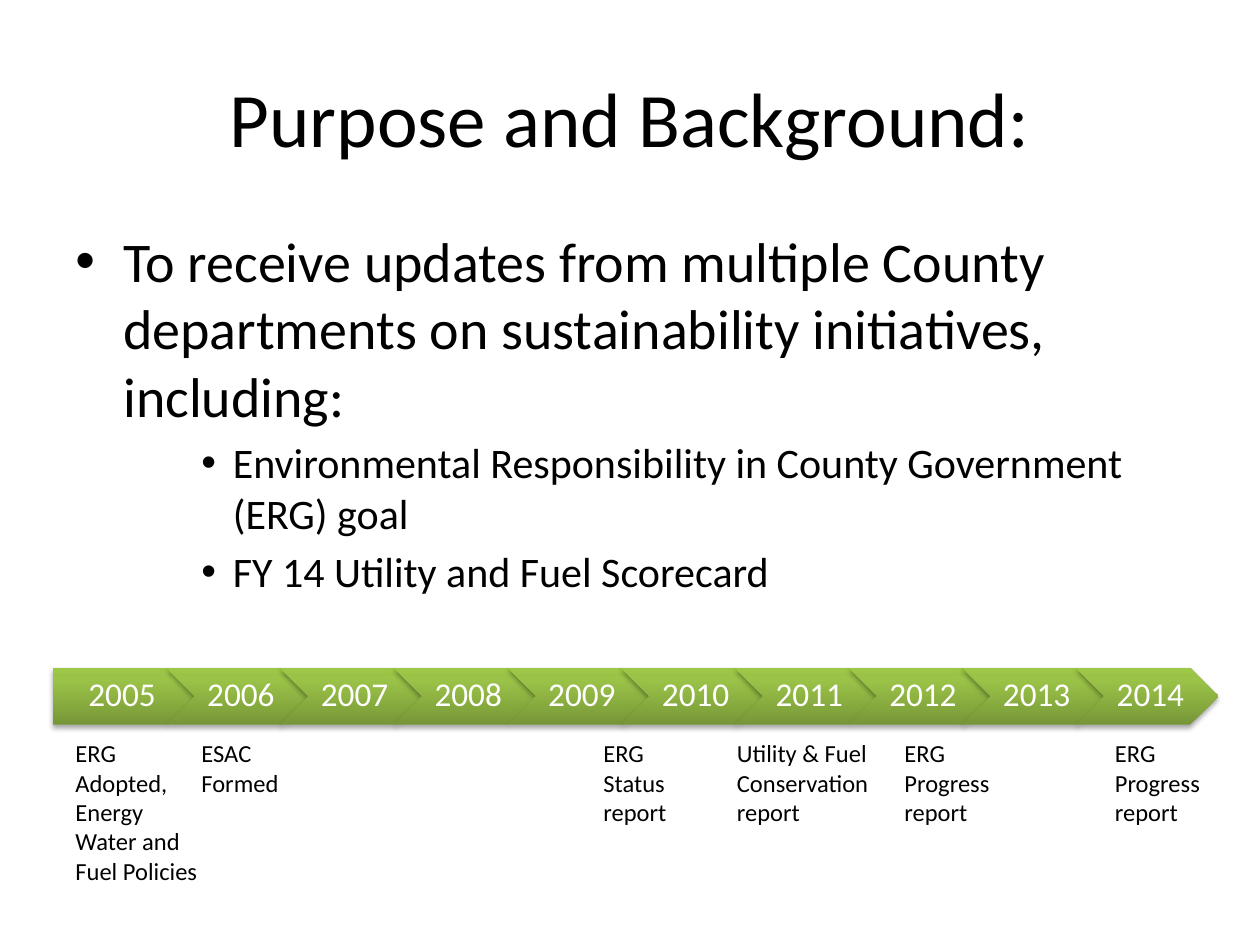
from dataclasses import dataclass

from lxml import etree
from pptx import Presentation
from pptx.dml.color import RGBColor
from pptx.enum.shapes import MSO_SHAPE
from pptx.enum.text import MSO_ANCHOR, PP_ALIGN
from pptx.oxml import parse_xml
from pptx.oxml.ns import nsdecls, qn
from pptx.util import Inches, Pt

HOME_PLATE, CHEVRON = MSO_SHAPE.PENTAGON, MSO_SHAPE.CHEVRON
MIDDLE, CENTER = MSO_ANCHOR.MIDDLE, PP_ALIGN.CENTER


@dataclass(frozen=True)
class Theme:
    font: str = "Calibri"
    text: str = "000000"
    year_text: str = "FFFFFF"
    greens: tuple = ((0, "779737"), (80, "9BC348"), (100, "9DC746"))
    title_size: int = 44
    lead_size: int = 32
    item_size: int = 24
    year_size: int = 19
    label_size: int = 14


theme = Theme()


def style(paragraph, size, color=theme.text):
    paragraph.font.name = theme.font
    paragraph.font.size = Pt(size)
    paragraph.font.color.rgb = RGBColor.from_string(color)


def add_text_box(left, top, width, height):
    frame = slide.shapes.add_textbox(
        Inches(left), Inches(top), Inches(width), Inches(height)).text_frame
    frame.word_wrap = True
    return frame


prs = Presentation()
prs.slide_width, prs.slide_height = Inches(10), Inches(7.5)
slide = prs.slides.add_slide(prs.slide_layouts[5])

# Title
title = slide.shapes.title
title.left, title.top = Inches(0.5), Inches(0.3)
title.width, title.height = Inches(9), Inches(1.25)
title.text_frame.text = "Purpose and Background:"
title.text_frame.vertical_anchor = MIDDLE
title.text_frame.paragraphs[0].alignment = CENTER
style(title.text_frame.paragraphs[0], theme.title_size)

# Purpose bullets: text, level, left margin, hanging indent, size, space before
purpose = [
    ("To receive updates from multiple County departments on sustainability "
     "initiatives, including:", 0, 0.38, 0.38, theme.lead_size, 0),
    ("Environmental Responsibility in County Government (ERG) goal",
     2, 1.25, 0.25, theme.item_size, 4.8),
    ("FY 14 Utility and Fuel Scorecard", 2, 1.25, 0.25, theme.item_size, 4.8),
]
body = add_text_box(0.5, 1.75, 9, 3.4)
for i, (text, level, margin, hanging, size, before) in enumerate(purpose):
    item = body.paragraphs[0] if i == 0 else body.add_paragraph()
    item.text = text
    item.level = level
    item.space_before = Pt(before)
    props = item._p.get_or_add_pPr()
    props.set("marL", str(Inches(margin)))
    props.set("indent", str(-Inches(hanging)))
    etree.SubElement(props, qn("a:buFont")).set("typeface", "Arial")
    etree.SubElement(props, qn("a:buChar")).set("char", "•")
    style(item, size)

# Timeline of years
stops = "".join(f'<a:gs pos="{pos * 1000}"><a:srgbClr val="{color}"/></a:gs>'
                for pos, color in theme.greens)
GRADIENT = (f'<a:gradFill {nsdecls("a")} rotWithShape="1"><a:gsLst>{stops}</a:gsLst>'
            '<a:lin ang="16200000" scaled="0"/></a:gradFill>')
SHADOW = (f'<a:effectLst {nsdecls("a")}><a:outerShdw blurRad="{Pt(3.1)}" '
          f'dist="{Pt(1.8)}" dir="5400000" rotWithShape="0">'
          '<a:srgbClr val="000000"><a:alpha val="35000"/></a:srgbClr>'
          '</a:outerShdw></a:effectLst>')
FIRST_YEAR, LAST_YEAR = 2005, 2014
timeline_left, timeline_right, arrow_width = 0.42, 9.67, 1.13
pitch = (timeline_right - timeline_left - arrow_width) / (LAST_YEAR - FIRST_YEAR)

for i, year in enumerate(range(FIRST_YEAR, LAST_YEAR + 1)):
    arrow = slide.shapes.add_shape(
        HOME_PLATE if i == 0 else CHEVRON, Inches(timeline_left + i * pitch),
        Inches(5.3), Inches(arrow_width), Inches(0.45))
    arrow_props = arrow._element.spPr
    arrow_props.append(parse_xml(GRADIENT))
    arrow.line.fill.background()
    arrow_props.append(parse_xml(SHADOW))
    frame = arrow.text_frame
    frame.vertical_anchor = MIDDLE
    frame.margin_left = Inches(0.11 if i == 0 else 0.08)
    frame.margin_right = Inches(0.03)
    frame.margin_top = frame.margin_bottom = Inches(0.06)
    frame.text = str(year)
    frame.paragraphs[0].alignment = CENTER
    frame.paragraphs[0].line_spacing = 0.9
    style(frame.paragraphs[0], theme.year_size, theme.year_text)

# Milestones under the timeline: left, width, height, text
milestones = [
    (0.5, 1.25, 1.28, "ERG Adopted, Energy Water and Fuel Policies"),
    (1.5, 1.25, 0.57, "ESAC Formed"),
    (4.69, 0.92, 0.81, "ERG Status report"),
    (5.75, 1.25, 0.81, "Utility & Fuel Conservation report"),
    (7.08, 0.92, 0.81, "ERG Progress report"),
    (8.75, 0.92, 0.81, "ERG Progress report"),
]
for left, width, height, text in milestones:
    label = add_text_box(left, 5.81, width, height)
    label.text = text
    style(label.paragraphs[0], theme.label_size)

prs.save("out.pptx")
